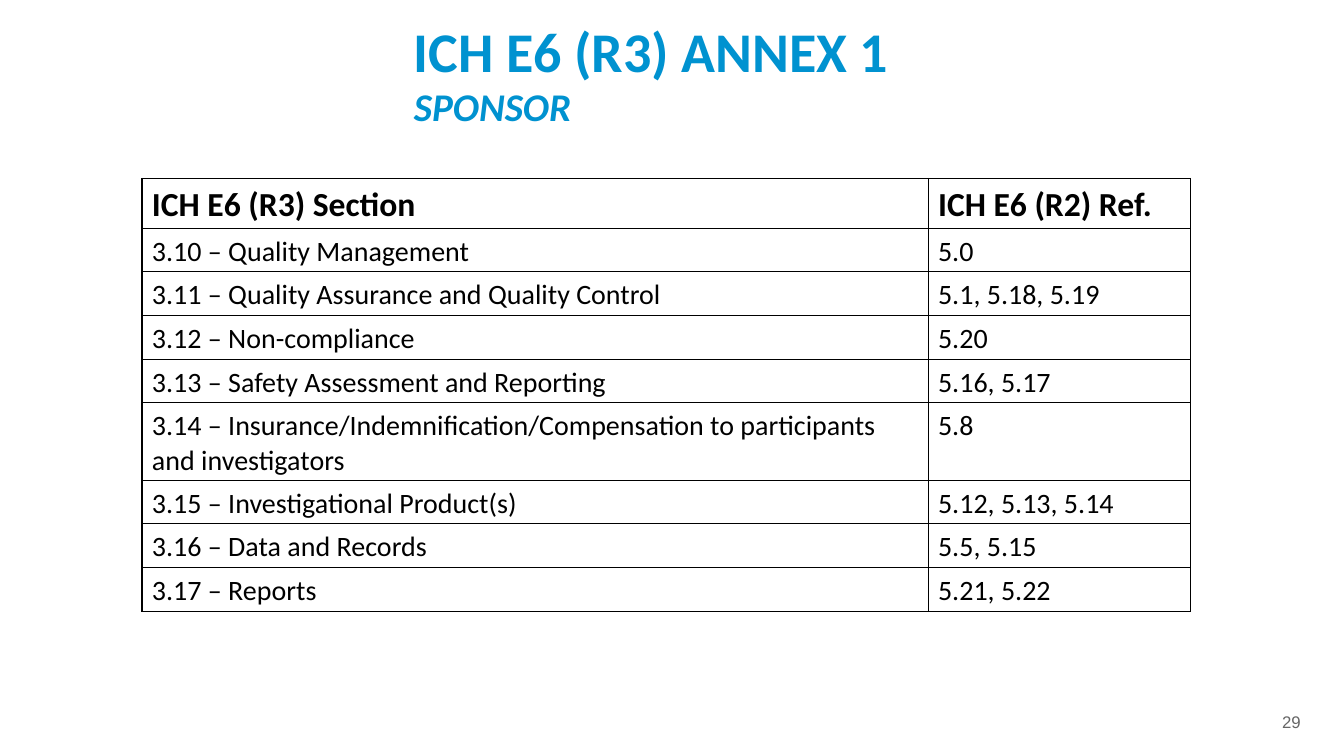
from lxml import etree
from pptx import Presentation
from pptx.dml.color import RGBColor
from pptx.enum.text import MSO_ANCHOR, PP_ALIGN
from pptx.oxml.ns import qn
from pptx.util import Cm, Pt

TOP, LEFT = MSO_ANCHOR.TOP, PP_ALIGN.LEFT
COLORS = {"title": "0092D0", "text": "000000", "cell": "FFFFFF", "number": "666666"}


def set_font(p, name, size, color, bold=False, italic=False):
    font = p.font
    font.name, font.size = name, Pt(size)
    font.bold, font.italic = bold, italic
    font.color.rgb = RGBColor.from_string(COLORS[color])


def set_borders(cell):
    tcPr = cell._tc.get_or_add_tcPr()
    for i, side in enumerate(("lnL", "lnR", "lnT", "lnB")):
        ln = etree.Element(qn(f"a:{side}"), w=str(Pt(1)))
        fill = etree.SubElement(ln, qn("a:solidFill"))
        etree.SubElement(fill, qn("a:srgbClr"), val=COLORS["text"])
        tcPr.insert(i, ln)


prs = Presentation()
prs.slide_width, prs.slide_height = Cm(33.87), Cm(19.05)
s = prs.slides.add_slide(prs.slide_layouts[5])

# Title and subtitle
title = s.shapes.title
title.left, title.top, title.width, title.height = Cm(10.26), Cm(-0.05), Cm(19.33), Cm(3.33)
tf = title.text_frame
tf.margin_left, tf.margin_top, tf.margin_right, tf.margin_bottom = Cm(0.17), Cm(0.5), 0, 0
tf.vertical_anchor = TOP
tf.word_wrap = True
tf.text = "ICH E6 (R3) ANNEX 1\nSPONSOR"
for p, size, spacing, italic in zip(tf.paragraphs, (40, 28), (47.2, 32.8), (False, True)):
    p.alignment = LEFT
    p.line_spacing = Pt(spacing)
    p.space_before = Pt(0)
    set_font(p, "Calibri", size, "title", bold=True, italic=italic)

# Section table
rows = [
    ("ICH E6 (R3) Section", "ICH E6 (R2) Ref."),
    ("3.10 – Quality Management", "5.0"),
    ("3.11 – Quality Assurance and Quality Control", "5.1, 5.18, 5.19"),
    ("3.12 – Non-compliance", "5.20"),
    ("3.13 – Safety Assessment and Reporting", "5.16, 5.17"),
    ("3.14 – Insurance/Indemnification/Compensation to participants\nand investigators", "5.8"),
    ("3.15 – Investigational Product(s)", "5.12, 5.13, 5.14"),
    ("3.16 – Data and Records", "5.5, 5.15"),
    ("3.17 – Reports", "5.21, 5.22"),
]
heights = [1.25] + [1.95 if "\n" in section else 1.1 for section, ref in rows[1:]]
widths = [19.81, 6.62]
table = s.shapes.add_table(len(rows), len(widths), Cm(3.58), Cm(4.5),
                           Cm(sum(widths)), Cm(sum(heights))).table
table.first_row = table.horz_banding = False
for column, width in zip(table.columns, widths):
    column.width = Cm(width)
for i, (row, height, texts) in enumerate(zip(table.rows, heights, rows)):
    row.height = Cm(height)
    for cell, text in zip(row.cells, texts):
        cell.text = text
        cell.margin_left, cell.margin_top = Cm(0.25), Cm(0.16)
        cell.margin_right = cell.margin_bottom = 0
        cell.vertical_anchor = TOP
        cell.fill.solid()
        cell.fill.fore_color.rgb = RGBColor.from_string(COLORS["cell"])
        set_borders(cell)
        for p in cell.text_frame.paragraphs:
            set_font(p, "Calibri", 24 if i == 0 else 20, "text", bold=i == 0)

# Slide number
tf = s.shapes.add_textbox(Cm(32.21), Cm(17.93), Cm(0.71), Cm(0.53)).text_frame
tf.margin_left, tf.margin_top, tf.margin_right, tf.margin_bottom = Cm(0.1), 0, 0, 0
tf.word_wrap = True
p = tf.paragraphs[0]
p.text = "29"
p.line_spacing = Pt(14.2)
set_font(p, "Arial", 12, "number")

prs.save("out.pptx")
